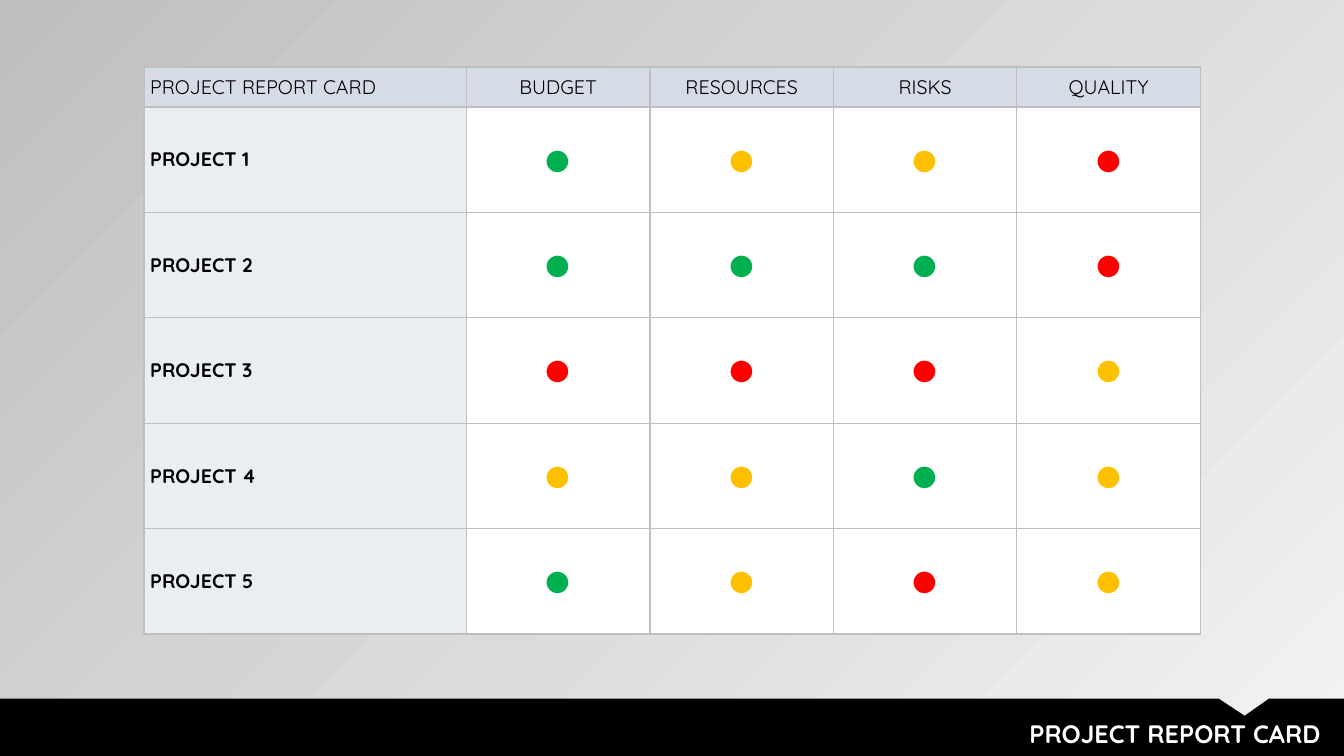
from lxml import etree
from pptx import Presentation
from pptx.dml.color import RGBColor
from pptx.enum.text import MSO_ANCHOR, MSO_AUTO_SIZE, PP_ALIGN
from pptx.oxml.ns import qn
from pptx.util import Pt

LEFT, CENTER, RIGHT = PP_ALIGN.LEFT, PP_ALIGN.CENTER, PP_ALIGN.RIGHT
MIDDLE = MSO_ANCHOR.MIDDLE
GROW = MSO_AUTO_SIZE.SHAPE_TO_FIT_TEXT

PAGE_WIDTH, PAGE_HEIGHT = 960, 540
FONT = "Quicksand"
TITLE = "PROJECT REPORT CARD"
BLACK, WHITE, GRID = "000000", "FFFFFF", "BFBFBF"
HEADER_FILL, LABEL_FILL = "D6DCE5", "EAEEF3"

HEADINGS = [TITLE, "BUDGET", "RESOURCES", "RISKS", "QUALITY"]
STATUS_COLORS = {"G": "00B050", "Y": "FFC000", "R": "FF0000"}
# One letter per heading: green, yellow or red
RATINGS = {
    "PROJECT 1": "GYYR",
    "PROJECT 2": "GGGR",
    "PROJECT 3": "RRRY",
    "PROJECT 4": "YYGY",
    "PROJECT 5": "GYRY",
}


def color(value):
    return RGBColor.from_string(value)


def write(frame, text, align, size, ink, bold=False):
    para = frame.paragraphs[0]
    para.alignment = align
    span = para.add_run()
    span.text = text
    for name, value in {"name": FONT, "size": Pt(size), "bold": bold}.items():
        setattr(span.font, name, value)
    span.font.color.rgb = color(ink)


def add_borders(cell):
    properties = cell._tc.get_or_add_tcPr()
    for index, side in enumerate(("lnL", "lnR", "lnT", "lnB")):
        line = etree.Element(qn(f"a:{side}"), w=str(Pt(1)))
        fill = etree.SubElement(line, qn("a:solidFill"))
        etree.SubElement(fill, qn("a:srgbClr"), val=GRID)
        properties.insert(index, line)


def fill_cell(cell, fill, text, align, size, ink, bold=False):
    layout = {"margin_left": Pt(4.5), "margin_right": Pt(4.5),
              "margin_top": 0, "margin_bottom": 0, "vertical_anchor": MIDDLE}
    for name, value in layout.items():
        setattr(cell, name, value)
    cell.fill.solid()
    cell.fill.fore_color.rgb = color(fill)
    add_borders(cell)
    write(cell.text_frame, text, align, size, ink, bold)


def paint_background(page):
    fill = page.background.fill
    fill.gradient()
    fill.gradient_angle = 135
    for stop, shade in zip(fill.gradient_stops, ("F2F2F2", "BFBFBF")):
        stop.color.rgb = color(shade)


def add_report_table(page, left, top, width, height):
    label_width, header_height = 230.4, 28.6
    frame = page.shapes.add_table(len(RATINGS) + 1, len(HEADINGS),
                                  Pt(left), Pt(top), Pt(width), Pt(height))
    table = frame.table
    table.first_row = table.horz_banding = False

    # Equal rating columns and project rows
    for index, column in enumerate(table.columns):
        rating_width = (width - label_width) / (len(HEADINGS) - 1)
        column.width = Pt(rating_width if index else label_width)
    for index, row in enumerate(table.rows):
        project_height = (height - header_height) / len(RATINGS)
        row.height = Pt(project_height if index else header_height)

    # Headings
    for index, heading in enumerate(HEADINGS):
        fill_cell(table.cell(0, index), HEADER_FILL, heading,
                  CENTER if index else LEFT, 14, BLACK)

    # Projects with their status dots
    for row, (project, ratings) in enumerate(RATINGS.items(), 1):
        fill_cell(table.cell(row, 0), LABEL_FILL, project, LEFT, 14, BLACK, True)
        for column, rating in enumerate(ratings, 1):
            fill_cell(table.cell(row, column), WHITE, "•", CENTER, 60,
                      STATUS_COLORS[rating])


def add_footer(page, left, top, width, height):
    # Band with a notch in its upper edge
    right, bottom = left + width, top + height
    outline = [(right - 89.5, top), (right - 71, top + 12.3), (right - 53.5, top),
               (right, top), (right, bottom), (left, bottom)]
    builder = page.shapes.build_freeform(Pt(left), Pt(top))
    builder.add_line_segments([(Pt(x), Pt(y)) for x, y in outline], close=True)
    band = builder.convert_to_shape()
    band.shadow.inherit = False
    band.fill.solid()
    band.fill.fore_color.rgb = color(BLACK)
    band.line.fill.background()

    # Title
    box = page.shapes.add_textbox(Pt(right - 662), Pt(top + 10.8),
                                  Pt(652.3), Pt(29))
    box.text_frame.word_wrap = True
    box.text_frame.auto_size = GROW
    write(box.text_frame, TITLE, RIGHT, 18, WHITE, True)


def main():
    deck = Presentation()
    deck.slide_width, deck.slide_height = Pt(PAGE_WIDTH), Pt(PAGE_HEIGHT)
    page = deck.slides.add_slide(deck.slide_layouts[6])
    paint_background(page)
    add_footer(page, 0, 499, PAGE_WIDTH, PAGE_HEIGHT - 499)
    add_report_table(page, 102.8, 47.8, 754.6, 405.1)
    deck.save("out.pptx")


if __name__ == "__main__":
    main()
